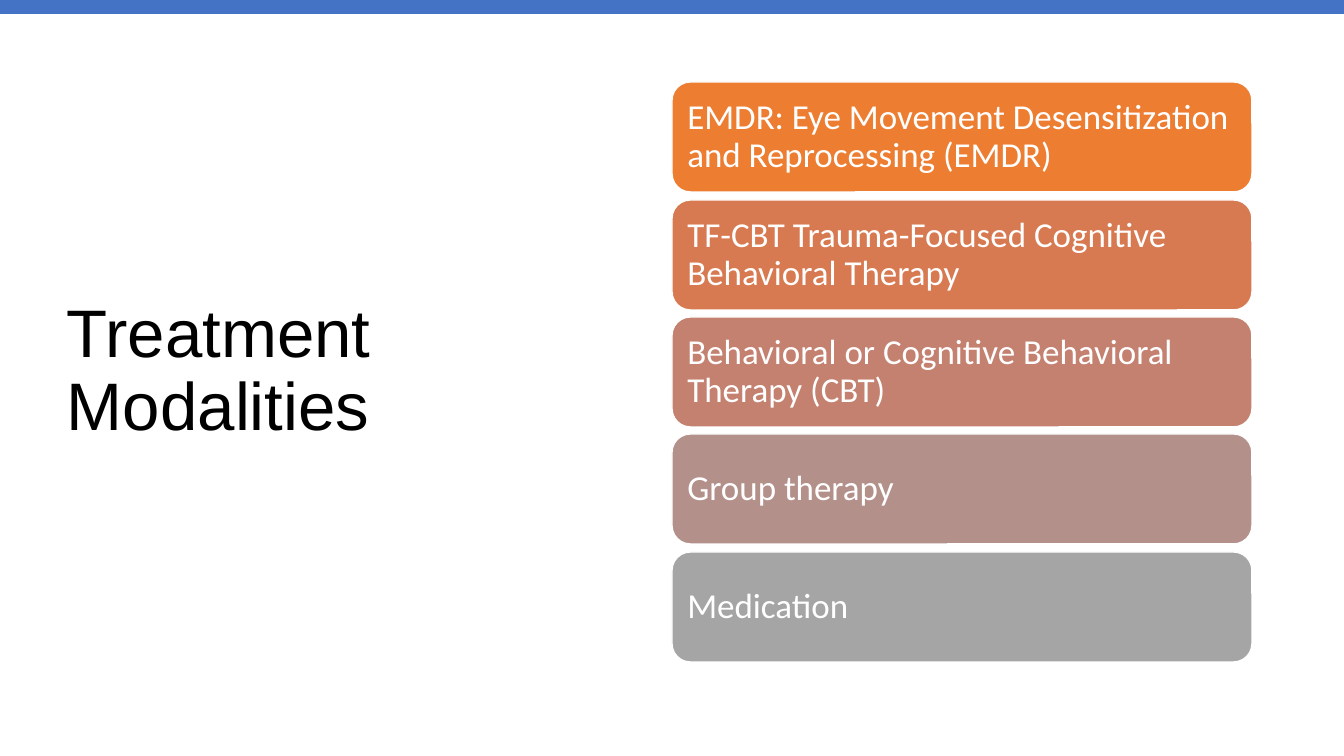
from pptx import Presentation
from pptx.dml.color import RGBColor
from pptx.enum.shapes import MSO_SHAPE as Shape
from pptx.enum.text import MSO_ANCHOR as Anchor, PP_ALIGN as Align
from pptx.util import Pt

PX = 914400 / 100.8
COLORS = {
    "bar": "4472C4",
    "title": "000000",
    "white": "FFFFFF",
    "emdr": "ED7D31",
    "tf_cbt": "D87A51",
    "cbt": "C48170",
    "group": "B4908B",
    "medication": "A5A5A5",
}
MODALITIES = [
    ("emdr", "EMDR: Eye Movement Desensitization and Reprocessing (EMDR)"),
    ("tf_cbt", "TF-CBT Trauma-Focused Cognitive Behavioral Therapy"),
    ("cbt", "Behavioral or Cognitive Behavioral Therapy (CBT)"),
    ("group", "Group therapy"),
    ("medication", "Medication"),
]
CARD_TOP, LAST_CARD_TOP = 82, 552


def px(*lengths):
    return [round(length * PX) for length in lengths]


def write(box, text, *, font, size, color, inset):
    frame = box.text_frame
    frame.word_wrap = True
    frame.vertical_anchor = Anchor.MIDDLE
    frame.margin_left, frame.margin_right = px(inset, inset)
    frame.margin_top, frame.margin_bottom = px(5, 5)
    para = frame.paragraphs[0]
    para.alignment = Align.LEFT
    para.line_spacing = 0.9
    span = para.add_run()
    span.text = text
    span.font.name = font
    span.font.size = Pt(size)
    span.font.color.rgb = RGBColor.from_string(COLORS[color])


deck = Presentation()
deck.slide_width, deck.slide_height = px(1344, 756)
page = deck.slides.add_slide(deck.slide_layouts[6])

title = page.shapes.add_textbox(*px(57, 69, 572, 607))
write(title, "Treatment Modalities", font="Arial", size=48, color="title", inset=10)

bar = page.shapes.add_shape(Shape.RECTANGLE, *px(0, 0, 1344, 14))
bar.shadow.inherit = False
bar.fill.solid()
bar.fill.fore_color.rgb = RGBColor.from_string(COLORS["bar"])
bar.line.fill.background()

pitch = (LAST_CARD_TOP - CARD_TOP) / (len(MODALITIES) - 1)
for index, (color, text) in enumerate(MODALITIES):
    top = round(CARD_TOP + index * pitch)
    card = page.shapes.add_shape(Shape.ROUNDED_RECTANGLE, *px(672, top, 580, 110))
    card.shadow.inherit = False
    card.fill.solid()
    card.fill.fore_color.rgb = RGBColor.from_string(COLORS[color])
    card.line.color.rgb = RGBColor.from_string(COLORS["white"])
    card.line.width = Pt(1)
    write(card, text, font="Calibri", size=25, color="white", inset=10)

deck.save("out.pptx")
